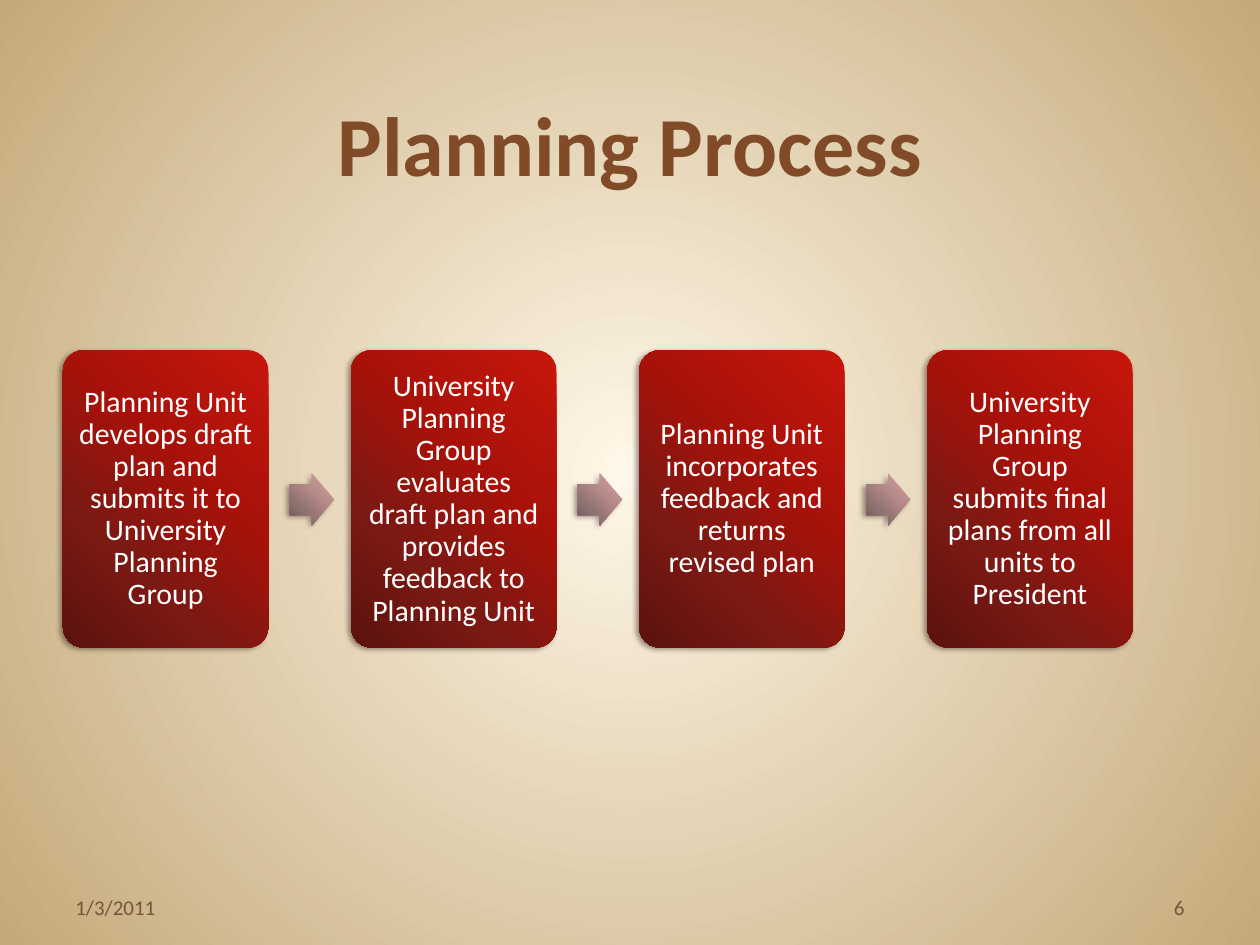
from lxml.etree import SubElement
from pptx import Presentation
from pptx.dml.color import RGBColor
from pptx.enum.shapes import MSO_SHAPE
from pptx.enum.text import MSO_ANCHOR, PP_ALIGN
from pptx.oxml.ns import qn
from pptx.util import Inches, Pt

STEPS = [
    "Planning Unit develops draft plan and submits it to University Planning Group",
    "University Planning Group evaluates draft plan and provides feedback to Planning Unit",
    "Planning Unit incorporates feedback and returns revised plan",
    "University Planning Group submits final plans from all units to President",
]
BACKGROUND = [(0, "FFF7E8"), (100, "C4AA7A")]
BOX_RED = [(0, "C8160C"), (40, "A6120A"), (70, "7B1913"), (100, "5B120E")]
ARROW_ROSE = [(0, "DAA6A5"), (40, "B58A89"), (70, "8F7372"), (100, "6A5554")]
FIRST_LEFT, LAST_LEFT = 0.5, 7.36
PITCH = (LAST_LEFT - FIRST_LEFT) / (len(STEPS) - 1)
ARROW_OFFSET = 1.8


def color(value):
    return RGBColor.from_string(value)


def set_gradient(fill, owner, stops, angle=None):
    """Fill with a linear gradient, or a circular one from the centre without an angle."""
    fill.gradient()
    gradient = owner.find(".//" + qn("a:gradFill"))
    for child in list(gradient):
        gradient.remove(child)
    stop_list = SubElement(gradient, qn("a:gsLst"))
    for position, value in stops:
        stop = SubElement(stop_list, qn("a:gs"), pos=str(position * 1000))
        SubElement(stop, qn("a:srgbClr"), val=value)
    if angle is None:
        path = SubElement(gradient, qn("a:path"), path="circle")
        SubElement(path, qn("a:fillToRect"), l="50000", t="50000", r="50000", b="50000")
    else:
        SubElement(gradient, qn("a:lin"), ang=str(angle * 60000), scaled="0")


def add_shadow(shape):
    shape.shadow.inherit = False
    effects = shape._element.spPr.find(qn("a:effectLst"))
    shadow = SubElement(effects, qn("a:outerShdw"), blurRad=str(Pt(3.1)), dist=str(Pt(2)),
                        dir=str(150 * 60000), algn="tl", rotWithShape="0")
    shadow_color = SubElement(shadow, qn("a:srgbClr"), val="1A0000")
    SubElement(shadow_color, qn("a:alpha"), val="40000")


def write_text(text_frame, text, size, value, alignment, anchor, bold=False):
    text_frame.word_wrap = True
    text_frame.vertical_anchor = anchor
    text_frame.text = text
    paragraph = text_frame.paragraphs[0]
    paragraph.alignment = alignment
    font = paragraph.runs[0].font
    font.name, font.size, font.bold = "Calibri", Pt(size), bold
    font.color.rgb = color(value)
    return paragraph


def add_label(slide, bounds, text, size, value, alignment, bold=False):
    text_box = slide.shapes.add_textbox(*map(Inches, bounds))
    write_text(text_box.text_frame, text, size, value, alignment, MSO_ANCHOR.BOTTOM, bold)


def add_gradient_shape(slide, kind, bounds, adjustments, stops):
    shape = slide.shapes.add_shape(kind, *map(Inches, bounds))
    for index, adjustment in enumerate(adjustments):
        shape.adjustments[index] = adjustment
    set_gradient(shape.fill, shape._element.spPr, stops, 133)
    shape.line.fill.background()
    add_shadow(shape)
    return shape


def add_step(slide, left, text):
    box = add_gradient_shape(slide, MSO_SHAPE.ROUNDED_RECTANGLE,
                             (left, 2.78, 1.63, 2.36), [0.1], BOX_RED)
    text_frame = box.text_frame
    text_frame.margin_left = text_frame.margin_right = Inches(0.07)
    text_frame.margin_top = text_frame.margin_bottom = Inches(0.07)
    paragraph = write_text(text_frame, text, 17, "FFFFFF", PP_ALIGN.CENTER, MSO_ANCHOR.MIDDLE)
    paragraph.line_spacing = 0.9


def add_arrow(slide, left):
    add_gradient_shape(slide, MSO_SHAPE.RIGHT_ARROW,
                       (left, 3.76, 0.35, 0.41), [0.6, 0.5], ARROW_ROSE)


def main():
    presentation = Presentation()
    presentation.slide_width, presentation.slide_height = Inches(10), Inches(7.5)
    slide = presentation.slides.add_slide(presentation.slide_layouts[6])
    set_gradient(slide.background.fill, slide._element, BACKGROUND)

    add_label(slide, (0.5, 0.33, 9, 1.25), "Planning Process", 48, "804B26",
              PP_ALIGN.CENTER, bold=True)
    for index, text in enumerate(STEPS):
        left = FIRST_LEFT + index * PITCH
        add_step(slide, left, text)
        if index < len(STEPS) - 1:
            add_arrow(slide, left + ARROW_OFFSET)
    add_label(slide, (0.5, 6.83, 2.33, 0.52), "1/3/2011", 12, "795339", PP_ALIGN.LEFT)
    add_label(slide, (7.17, 6.83, 2.33, 0.52), "6", 12, "795339", PP_ALIGN.RIGHT)

    presentation.save("out.pptx")


if __name__ == "__main__":
    main()
